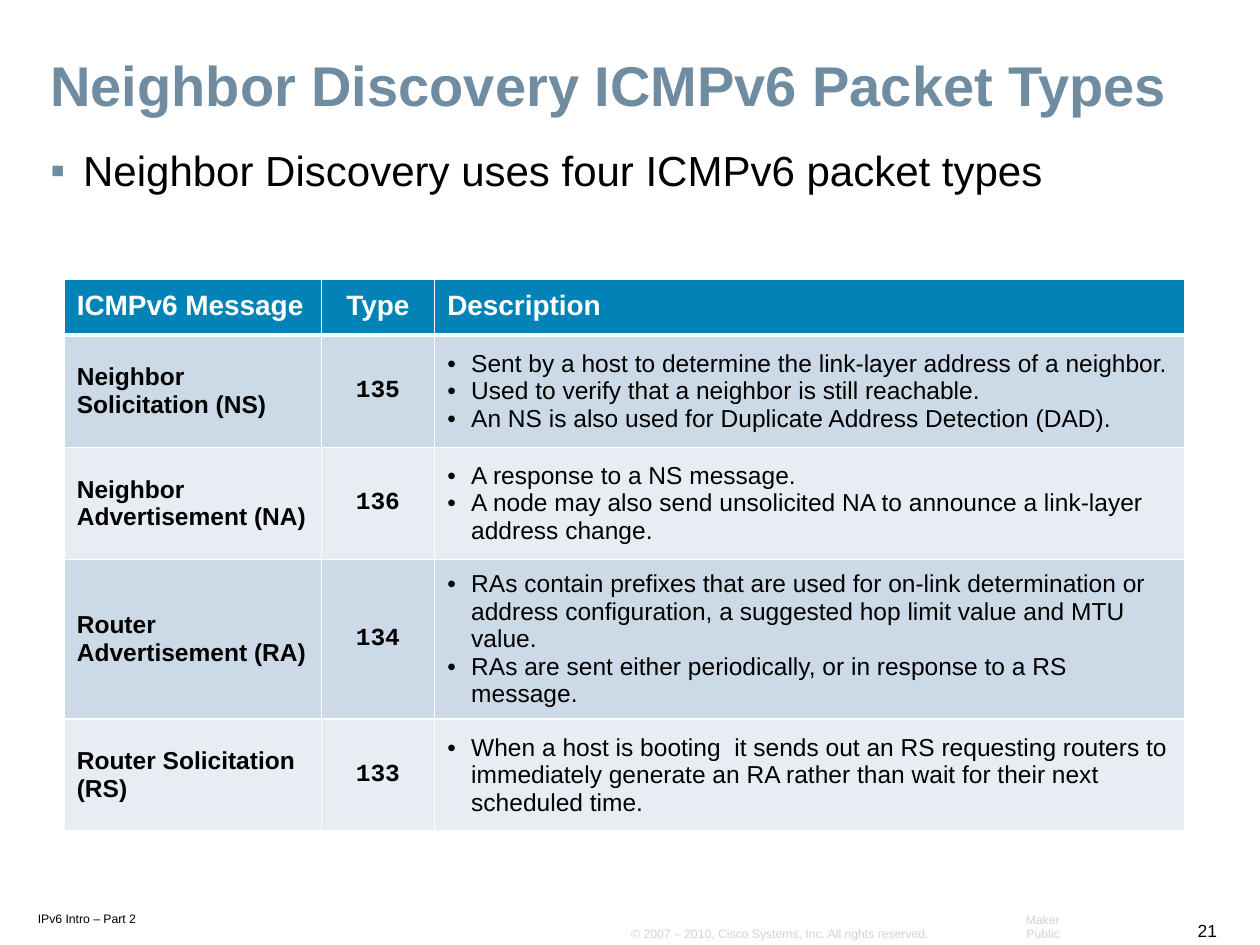
import pptx
import pptx.util
import pptx.dml.color
import pptx.enum.text
import pptx.oxml.ns
from lxml import etree

Inches, Pt = pptx.util.Inches, pptx.util.Pt
ALIGN, ANCHOR = pptx.enum.text.PP_ALIGN, pptx.enum.text.MSO_ANCHOR
qn = pptx.oxml.ns.qn

COLORS = {"title": "708CA1", "text": "000000", "footer": "D3D3D3", "white": "FFFFFF",
          "header": "0183B7", "odd": "CCD9E6", "even": "E7EDF3"}

TITLE = "Neighbor Discovery ICMPv6 Packet Types"
BODY = "Neighbor Discovery uses four ICMPv6 packet types"
FOOTERS = [
    ("IPv6 Intro – Part 2", (0.21, 7.18, 1.05, 0.21),
     {"size": 7, "wrap": True}),
    ("21", (9.4, 7.25, 0.35, 0.26),
     {"size": 10, "align": ALIGN.RIGHT}),
    ("© 2007 – 2010, Cisco Systems, Inc. All rights reserved.", (4.92, 7.3, 2.57, 0.21),
     {"size": 7, "color": "footer"}),
    ("Maker Public", (7.79, 7.3, 0.71, 0.21),
     {"size": 7, "color": "footer", "align": ALIGN.RIGHT}),
]
HEADERS = ["ICMPv6 Message", "Type", "Description"]
MESSAGES = [
    ("Neighbor Solicitation (NS)", "135", [
        "Sent by a host to determine the link-layer address of a neighbor.",
        "Used to verify that a neighbor is still reachable.",
        "An NS is also used for Duplicate Address Detection (DAD)."]),
    ("Neighbor Advertisement (NA)", "136", [
        "A response to a NS message.",
        "A node may also send unsolicited NA to announce a link-layer address change."]),
    ("Router Advertisement (RA)", "134", [
        "RAs contain prefixes that are used for on-link determination or address "
        "configuration, a suggested hop limit value and MTU value.",
        "RAs are sent either periodically, or in response to a RS message."]),
    ("Router Solicitation (RS)", "133", [
        "When a host is booting  it sends out an RS requesting routers to immediately "
        "generate an RA rather than wait for their next scheduled time."]),
]
COL_WIDTHS = [2.04, 0.9, 5.95]
ROW_HEIGHTS = [0.44] + [0.89] * len(MESSAGES)


def rgb(name):
    return pptx.dml.color.RGBColor.from_string(COLORS[name])


def add_bullet(p, char, indent, color=None):
    pPr = p._p.get_or_add_pPr()
    pPr.set("marL", str(Inches(indent)))
    pPr.set("indent", str(-Inches(indent)))
    if color:
        clr = etree.SubElement(pPr, qn("a:buClr"))
        etree.SubElement(clr, qn("a:srgbClr"), val=COLORS[color])
    etree.SubElement(pPr, qn("a:buFont"), typeface="Arial")
    etree.SubElement(pPr, qn("a:buChar"), char=char)


def write(tf, text, size=14, font="Arial", color="text", bold=False, align=ALIGN.LEFT,
          spacing=None, after=None, bullet=None):
    lines = [text] if isinstance(text, str) else text
    for i, line in enumerate(lines):
        p = tf.paragraphs[0] if i == 0 else tf.add_paragraph()
        p.alignment = align
        if spacing:
            p.line_spacing = spacing
        if after:
            p.space_after = Pt(after)
        if bullet:
            add_bullet(p, *bullet)
        r = p.add_run()
        r.text = line
        r.font.size, r.font.name, r.font.bold = Pt(size), font, bold
        r.font.color.rgb = rgb(color)


def add_text(slide, text, box, anchor=ANCHOR.BOTTOM, wrap=False, **fmt):
    tf = slide.shapes.add_textbox(*map(Inches, box)).text_frame
    tf.word_wrap = wrap
    tf.vertical_anchor = anchor
    tf.margin_left = tf.margin_right = Inches(0.09)
    tf.margin_top = tf.margin_bottom = Inches(0.04)
    write(tf, text, **fmt)


def style_cell(cell, fill, bottom):
    cell.vertical_anchor = ANCHOR.MIDDLE
    tcPr = cell._tc.get_or_add_tcPr()
    for side, width in (("L", 1), ("R", 1), ("T", 1), ("B", bottom)):
        ln = etree.SubElement(tcPr, qn("a:ln" + side), w=str(Pt(width)))
        solid = etree.SubElement(ln, qn("a:solidFill"))
        etree.SubElement(solid, qn("a:srgbClr"), val=COLORS["white"])
    cell.fill.solid()
    cell.fill.fore_color.rgb = rgb(fill)


def add_message_table(slide):
    table = slide.shapes.add_table(
        len(ROW_HEIGHTS), len(COL_WIDTHS), Inches(0.51), Inches(2.22),
        Inches(sum(COL_WIDTHS)), Inches(sum(ROW_HEIGHTS))).table
    for col, width in zip(table.columns, COL_WIDTHS):
        col.width = Inches(width)
    for row, height in zip(table.rows, ROW_HEIGHTS):
        row.height = Inches(height)

    header = {"size": 16, "color": "white", "bold": True, "spacing": 0.9}
    formats = [{"bold": True},
               {"bold": True, "font": "Courier New", "align": ALIGN.CENTER},
               {"bullet": ("•", 0.19)}]
    for r, values in enumerate([HEADERS] + MESSAGES):
        fill = "header" if r == 0 else "odd" if r % 2 else "even"
        for c, value in enumerate(values):
            cell = table.cell(r, c)
            style_cell(cell, fill, bottom=3 if r == 0 else 1)
            if r == 0:
                align = formats[c].get("align", ALIGN.LEFT)
                write(cell.text_frame, value, align=align, **header)
            else:
                write(cell.text_frame, value, **formats[c])


def main():
    prs = pptx.Presentation()
    prs.slide_width, prs.slide_height = Inches(10), Inches(7.5)
    slide = prs.slides.add_slide(prs.slide_layouts[6])
    for text, box, fmt in FOOTERS:
        add_text(slide, text, box, **fmt)
    add_text(slide, TITLE, (0.31, 0.4, 9.32, 0.6), anchor=ANCHOR.MIDDLE, wrap=True,
             size=32, color="title", bold=True, spacing=0.9)
    add_text(slide, BODY, (0.31, 1.11, 9.32, 5.96), anchor=ANCHOR.TOP, wrap=True,
             size=24, after=6, bullet=("▪", 0.26, "title"))
    add_message_table(slide)
    prs.save("out.pptx")


if __name__ == "__main__":
    main()
